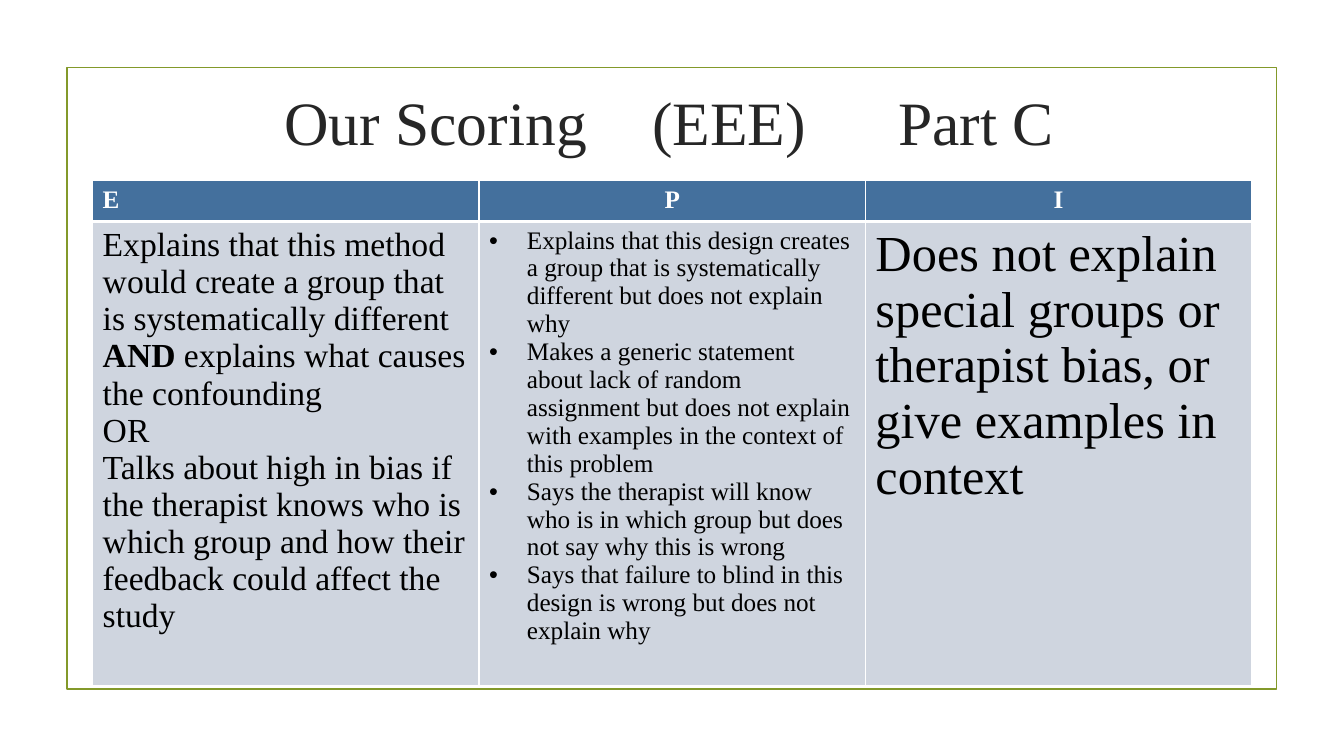
"""Build the Part C scoring slide with its E / P / I rubric table."""
from dataclasses import dataclass
from typing import Any

from lxml import etree
from pptx import Presentation
from pptx.dml.color import RGBColor
from pptx.enum import shapes, text
from pptx.oxml import ns
from pptx.util import Pt


@dataclass(frozen=True)
class Theme:
    font: str = "Times New Roman"
    bullet_font: str = "Arial"
    frame: str = "83992A"
    title: str = "262626"
    header_fill: str = "44709D"
    body_fill: str = "CFD5DF"
    body: str = "000000"
    white: str = "FFFFFF"
    title_size: float = 44
    header_size: float = 18


@dataclass(frozen=True)
class Span:
    words: str
    bold: bool = False


@dataclass(frozen=True)
class Column:
    heading: str
    align: Any
    size: float
    paragraphs: list[list[Span]]
    bulleted: bool = False


THEME = Theme()
ALIGN = text.PP_ALIGN
COLUMN_WIDTH, HEADER_HEIGHT, BODY_HEIGHT = 276, 29.2, 306
THIN, THICK = 1, 3
BULLET_INDENT = 27
TITLE_STOPS = (263, 438.5)

COLUMNS = [
    Column("E", ALIGN.LEFT, 24, [
        [Span("Explains that this method would create a group that is systematically different "),
         Span("AND", True),
         Span(" explains what causes the confounding")],
        [Span("OR")],
        [Span("Talks about high in bias if the therapist knows who is which group "
              "and how their feedback could affect the study")],
    ]),
    Column("P", ALIGN.CENTER, 18, [
        [Span("Explains that this design creates a group that is systematically different "
              "but does not explain why")],
        [Span("Makes a generic statement about lack of random assignment but does not explain "
              "with examples in the context of this problem")],
        [Span("Says the therapist will know who is in which group but does not say why this is wrong")],
        [Span("Says that failure to blind in this design is wrong but does not explain why")],
    ], bulleted=True),
    Column("I", ALIGN.CENTER, 36, [
        [Span("Does not explain special groups or therapist bias, or give examples in context")],
    ]),
]


def add_child(parent: Any, tag: str, **attrs: Any) -> Any:
    """Append a DrawingML element to a parent."""
    return etree.SubElement(parent, ns.qn(tag), {k: str(v) for k, v in attrs.items()})


def add_run(p: Any, span: Span, size: float, color: str) -> None:
    """Add one styled run to a paragraph."""
    r = p.add_run()
    r.text = span.words
    r.font.name = THEME.font
    r.font.size = Pt(size)
    r.font.bold = span.bold
    r.font.color.rgb = RGBColor.from_string(color)


def add_bullet(p: Any) -> None:
    """Give a paragraph a hanging bullet."""
    pPr = p._p.get_or_add_pPr()
    pPr.set("marL", str(Pt(BULLET_INDENT)))
    pPr.set("indent", str(-Pt(BULLET_INDENT)))
    add_child(pPr, "a:buFont", typeface=THEME.bullet_font)
    add_child(pPr, "a:buChar", char="•")


def style_cell(cell: Any, fill: str, top: float, bottom: float) -> None:
    """Set white borders and a solid fill on a cell."""
    tcPr = cell._tc.get_or_add_tcPr()
    for side, width in (("L", THIN), ("R", THIN), ("T", top), ("B", bottom)):
        ln = add_child(tcPr, f"a:ln{side}", w=Pt(width))
        add_child(add_child(ln, "a:solidFill"), "a:srgbClr", val=THEME.white)
    cell.fill.solid()
    cell.fill.fore_color.rgb = RGBColor.from_string(fill)


def add_frame(s: Any) -> None:
    """Draw the outlined frame around the content."""
    sp = s.shapes.add_shape(shapes.MSO_SHAPE.RECTANGLE, Pt(47.8), Pt(48.2), Pt(864), Pt(444))
    sp.shadow.inherit = False
    sp.fill.background()
    sp.line.color.rgb = RGBColor.from_string(THEME.frame)
    sp.line.width = Pt(1.25)


def add_title(s: Any) -> None:
    """Write the title in three parts set on tab stops."""
    sp = s.shapes.add_textbox(Pt(102), Pt(34.6), Pt(756), Pt(103))
    tf = sp.text_frame
    tf.word_wrap = True
    tf.vertical_anchor = text.MSO_ANCHOR.MIDDLE
    tf.margin_left = Pt(101)
    p = tf.paragraphs[0]
    p.alignment = ALIGN.LEFT
    tabs = add_child(p._p.get_or_add_pPr(), "a:tabLst")
    for stop in TITLE_STOPS:
        add_child(tabs, "a:tab", pos=Pt(stop), algn="l")
    add_run(p, Span("Our Scoring\t(EEE)\tPart C"), THEME.title_size, THEME.title)


def add_rubric(s: Any) -> None:
    """Draw the rubric table from its columns."""
    table = s.shapes.add_table(
        2, len(COLUMNS), Pt(66.2), Pt(129), Pt(COLUMN_WIDTH * len(COLUMNS)),
        Pt(HEADER_HEIGHT + BODY_HEIGHT)).table
    for row, height in zip(table.rows, (HEADER_HEIGHT, BODY_HEIGHT)):
        row.height = Pt(height)
    for i, column in enumerate(COLUMNS):
        table.columns[i].width = Pt(COLUMN_WIDTH)
        head, body = table.cell(0, i), table.cell(1, i)
        style_cell(head, THEME.header_fill, THIN, THICK)
        style_cell(body, THEME.body_fill, THICK, THIN)
        p = head.text_frame.paragraphs[0]
        p.alignment = column.align
        add_run(p, Span(column.heading, True), THEME.header_size, THEME.white)
        tf = body.text_frame
        for n, spans in enumerate(column.paragraphs):
            p = tf.add_paragraph() if n else tf.paragraphs[0]
            if column.bulleted:
                add_bullet(p)
            for span in spans:
                add_run(p, span, column.size, THEME.body)


def main() -> None:
    """Build and save the slide."""
    prs = Presentation()
    prs.slide_width, prs.slide_height = Pt(960), Pt(540)
    s = prs.slides.add_slide(prs.slide_layouts[6])
    add_frame(s)
    add_title(s)
    add_rubric(s)
    prs.save("out.pptx")


if __name__ == "__main__":
    main()
